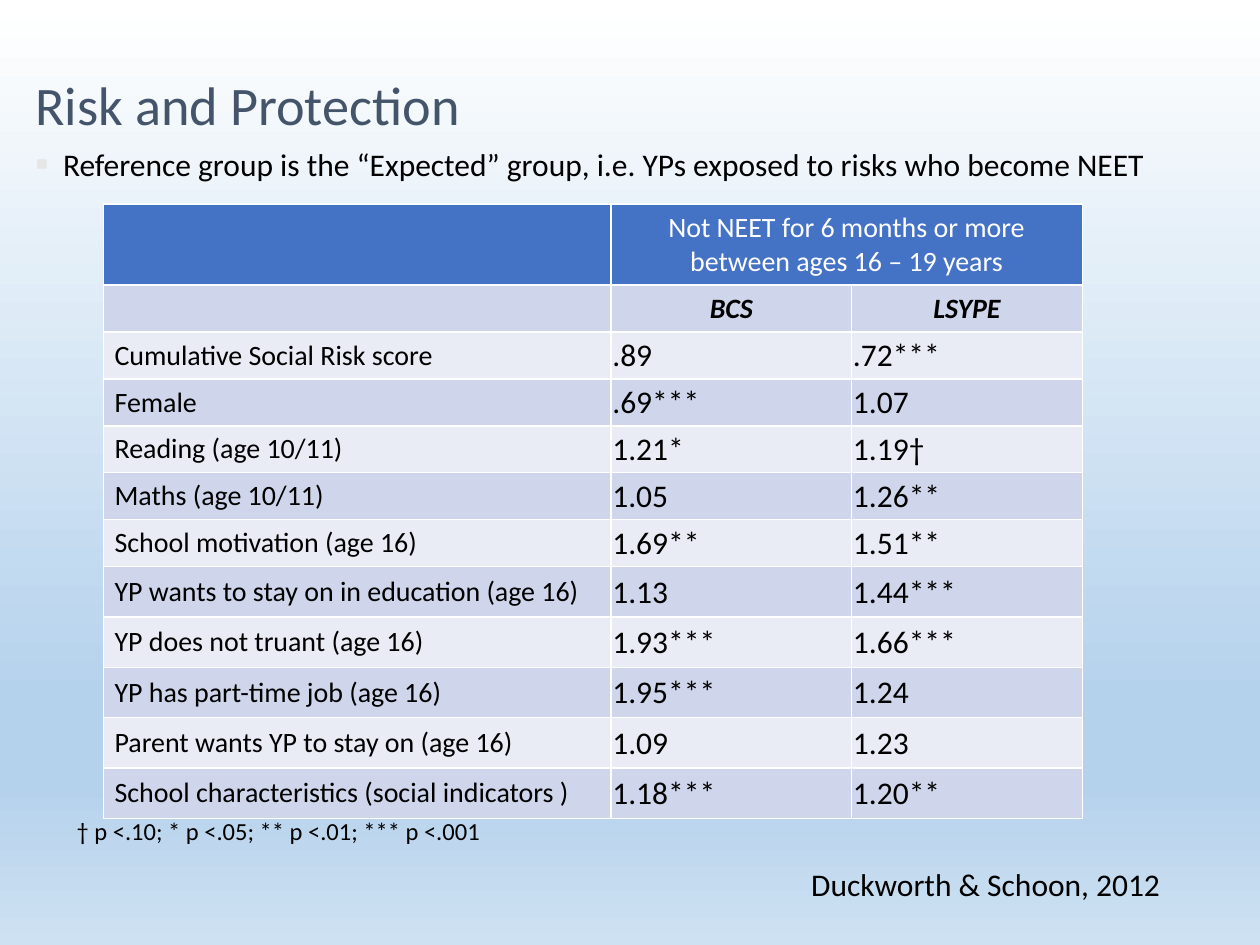
"""Build the Risk and Protection slide with its table of odds."""
from lxml.etree import SubElement as Sub
from pptx import Presentation
from pptx.dml.color import RGBColor
from pptx.enum.text import MSO_ANCHOR as Anchor, PP_ALIGN as Align
from pptx.oxml.ns import qn
from pptx.util import Inches, Pt

TITLE = "Risk and Protection"
POINT = "Reference group is the “Expected” group, i.e. YPs exposed to risks who become NEET"
HEAD = ("", "Not NEET for 6 months or more between ages 16 – 19 years", "")
GROUPS = ("", "BCS", "LSYPE")
SCORES = [
    ("Cumulative Social Risk score", ".89", ".72***"),
    ("Female", ".69***", "1.07"),
    ("Reading (age 10/11)", "1.21*", "1.19†"),
    ("Maths (age 10/11)", "1.05", "1.26**"),
    ("School motivation (age 16)", "1.69**", "1.51**"),
    ("YP wants to stay on in education (age 16)", "1.13", "1.44***"),
    ("YP does not truant (age 16)", "1.93***", "1.66***"),
    ("YP has part-time job (age 16)", "1.95***", "1.24"),
    ("Parent wants YP to stay on (age 16)", "1.09", "1.23"),
    ("School characteristics (social indicators )", "1.18***", "1.20**"),
]
NOTES = [
    ("† p <.10; * p <.05; ** p <.01; *** p <.001", 14, (0.51, 6.43, 5.29, 0.63)),
    ("Duckworth & Schoon, 2012", 18, (6.34, 6.82, 3.66, 0.4)),
]
SKY = [(0, "FFFFFF"), (74, "B5D2EC"), (83, "B5D2EC"), (100, "CEE1F2")]
WIDTHS = (4.03, 1.91, 1.83)
HEIGHTS = [0.63] + [0.37] * 6 + [0.4] * 5
BLUE, BANDS = "4472C4", ("E9EBF5", "CFD5EA")


def paint(fill, tone):
    fill.solid()
    fill.fore_color.rgb = RGBColor.from_string(tone)


def write(para, text, size, tone="000000", strong=False):
    run = para.add_run()
    run.text = text
    font = run.font
    font.name, font.size = "Calibri", Pt(size)
    font.bold = font.italic = strong
    paint(font.fill, tone)


def inset(frame, side, top, foot):
    frame.margin_left = frame.margin_right = Inches(side)
    frame.margin_top, frame.margin_bottom = Inches(top), Inches(foot)


def place(shape, box):
    shape.left, shape.top, shape.width, shape.height = map(Inches, box)
    inset(shape.text_frame, 0, 0, 0)
    return shape.text_frame


def add_sky(slide):
    fill = slide.background.fill
    fill.gradient()
    fill.gradient_angle = 270
    stops = slide.element.find(".//" + qn("a:gsLst"))
    stops.clear()
    for pos, tone in SKY:
        stop = Sub(stops, qn("a:gs"), pos=str(pos * 1000))
        Sub(stop, qn("a:srgbClr"), val=tone)


def add_bullet(para):
    props = para._p.get_or_add_pPr()
    props.set("marL", str(Inches(0.22)))
    props.set("indent", str(-Inches(0.22)))
    Sub(Sub(props, qn("a:buClr")), qn("a:srgbClr"), val="E7E6E6")
    Sub(props, qn("a:buSzPct"), val="120000")
    Sub(props, qn("a:buFont"), typeface="Calibri")
    Sub(props, qn("a:buChar"), char="▪")


def edge(cell):
    props = cell._tc.get_or_add_tcPr()
    for side in "LRTB":
        line = Sub(props, qn("a:ln" + side), w=str(Pt(1)))
        Sub(Sub(line, qn("a:solidFill")), qn("a:srgbClr"), val="FFFFFF")


def fill_cell(cell, text, row, col):
    edge(cell)
    paint(cell.fill, BANDS[row % 2] if row else BLUE)
    cell.vertical_anchor = Anchor.MIDDLE
    score = row > 1 and col > 0
    if score or not text:
        inset(cell, 0.01, 0.01, 0)
    else:
        inset(cell, 0.09, 0.05, 0.05)
    if text:
        para = cell.text_frame.paragraphs[0]
        para.alignment = Align.JUSTIFY if score else Align.CENTER if row < 2 else Align.LEFT
        write(para, text, 18 if score else 16, "000000" if row else "FFFFFF", row == 1)


def add_scores(slide):
    rows = [HEAD, GROUPS] + SCORES
    box = map(Inches, (0.82, 1.62, sum(WIDTHS), sum(HEIGHTS)))
    table = slide.shapes.add_table(len(rows), len(WIDTHS), *box).table
    for col, width in zip(table.columns, WIDTHS):
        col.width = Inches(width)
    for row, height in zip(table.rows, HEIGHTS):
        row.height = Inches(height)
    for r, row in enumerate(rows):
        for c, text in enumerate(row):
            fill_cell(table.cell(r, c), text, r, c)
    table.cell(0, 1).merge(table.cell(0, 2))


def main():
    deck = Presentation()
    deck.slide_width, deck.slide_height = Inches(10), Inches(7.5)
    slide = deck.slides.add_slide(deck.slide_layouts[1])
    add_sky(slide)
    title, body = slide.placeholders

    frame = place(title, (0.28, 0.29, 6.72, 0.79))
    frame.vertical_anchor = Anchor.BOTTOM
    para = frame.paragraphs[0]
    para.alignment, para.line_spacing = Align.LEFT, Pt(33.3)
    write(para, TITLE, 31, "44546A")

    para = place(body, (0.28, 1.15, 9.29, 4.43)).paragraphs[0]
    para.space_before = Pt(10.5)
    add_bullet(para)
    write(para, POINT, 18)

    add_scores(slide)
    for text, size, box in NOTES:
        frame = slide.shapes.add_textbox(*map(Inches, box)).text_frame
        frame.word_wrap = True
        write(frame.paragraphs[0], text, size)
    deck.save("out.pptx")


if __name__ == "__main__":
    main()
